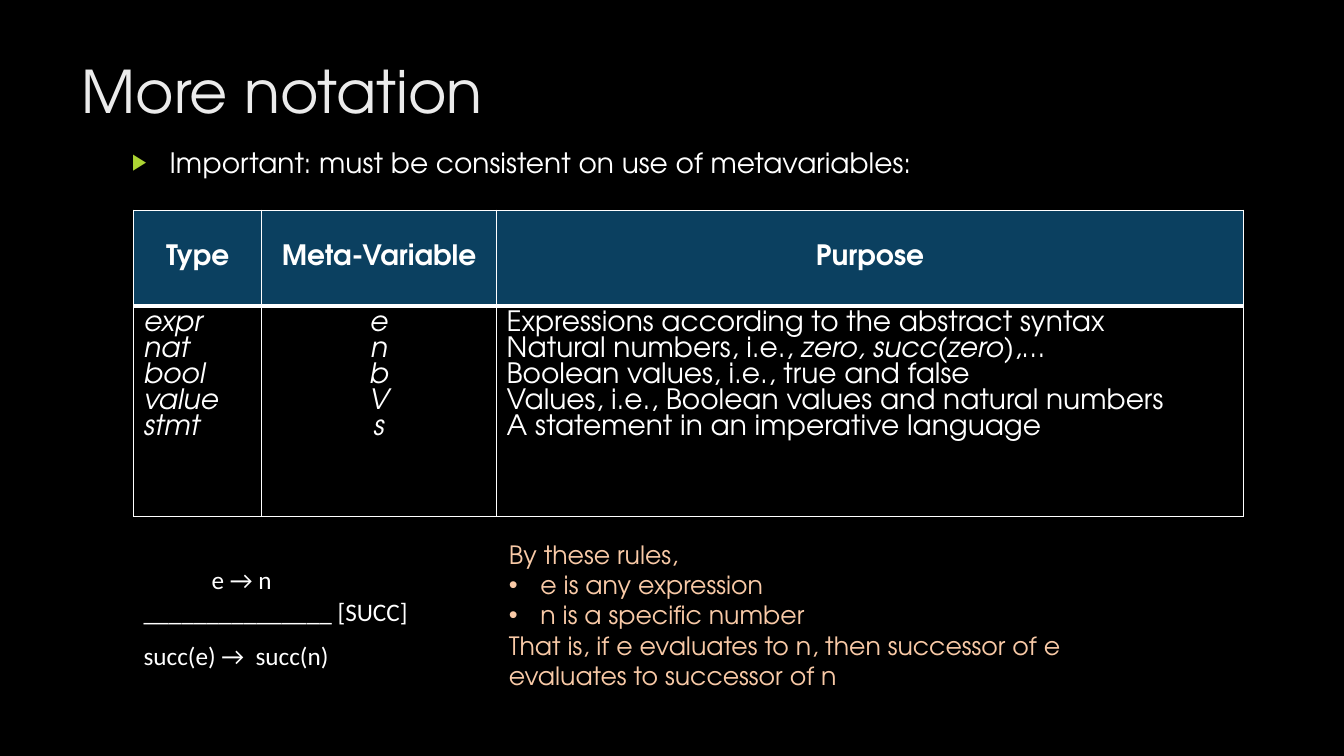
from lxml.etree import SubElement
from pptx import Presentation
from pptx.dml.color import RGBColor
from pptx.enum.text import MSO_ANCHOR, PP_ALIGN
from pptx.oxml.ns import qn
from pptx.util import Pt

BLACK = RGBColor(0x00, 0x00, 0x00)
WHITE = RGBColor(0xFF, 0xFF, 0xFF)
TITLE_GREY = RGBColor(0xEB, 0xEB, 0xEB)
HEADER_BLUE = RGBColor(0x0B, 0x40, 0x60)
BULLET_GREEN = RGBColor(0xAC, 0xD4, 0x33)
PEACH = RGBColor(0xF9, 0xCA, 0xA7)
DISPLAY_FONT = "TeX Gyre Adventor"
RULE_FONT = "Calibri"

TITLE = "More notation"
LEAD = "Important: must be consistent on use of metavariables:"
HEADERS = ["Type", "Meta-Variable", "Purpose"]
NOTATION = [
    ("expr", "e", [("Expressions according to the abstract syntax", False)]),
    ("nat", "n", [("Natural numbers, i.e., ", False), ("zero, succ(zero", True), ("),…", False)]),
    ("bool", "b", [("Boolean values, i.e., true and false", False)]),
    ("value", "V", [("Values, i.e., Boolean values and natural numbers", False)]),
    ("stmt", "s", [("A statement in an imperative language", False)]),
]
INFERENCE = [
    ("e → n", 48.6, 0),
    ("_______________ [SUCC]", 0, 8),
    ("succ(e) →  succ(n)", 0, 8),
]
READING = [
    ("By these rules,", False),
    ("e is any expression", True),
    ("n is a specific number", True),
    ("That is, if e evaluates to n, then successor of e evaluates to successor of n", False),
]

COLUMN_WIDTHS = [91.44, 167.76, 533.52]
ROW_HEIGHTS = [68.4, 150.48]
THIN, THICK = 1, 3


def style(para, size, color, name=DISPLAY_FONT, bold=False):
    font = para.font
    font.size, font.name, font.bold = Pt(size), name, bold
    font.color.rgb = color


def indent(para, left, hanging=0):
    props = para._p.get_or_add_pPr()
    props.set("marL", str(Pt(left)))
    props.set("indent", str(-Pt(hanging)))
    return props


def bullet(para, symbol, hanging, color=None, percent=100):
    props = indent(para, hanging, hanging)
    if color is not None:
        SubElement(SubElement(props, qn("a:buClr")), qn("a:srgbClr"), val=str(color))
    SubElement(props, qn("a:buSzPct"), val=str(percent * 1000))
    SubElement(props, qn("a:buFont"), typeface="Arial")
    SubElement(props, qn("a:buChar"), char=symbol)


def add_text(page, left, top, width, height, lines):
    box = page.shapes.add_textbox(Pt(left), Pt(top), Pt(width), Pt(height))
    box.text_frame.word_wrap = True
    return fill_lines(box.text_frame, lines)


def fill_lines(frame, lines):
    frame.text = "\n".join(lines)
    return frame.paragraphs


def border(cell, top, bottom):
    props = cell._tc.get_or_add_tcPr()
    for side, width in (("L", THIN), ("R", THIN), ("T", top), ("B", bottom)):
        line = SubElement(props, qn(f"a:ln{side}"), w=str(Pt(width)))
        SubElement(SubElement(line, qn("a:solidFill")), qn("a:srgbClr"), val=str(WHITE))


def add_notation_table(page):
    frame = page.shapes.add_table(2, 3, Pt(95.5), Pt(150.2),
                                  Pt(sum(COLUMN_WIDTHS)), Pt(sum(ROW_HEIGHTS)))
    table = frame.table
    table.first_row = table.horz_banding = False
    for row, height in zip(table.rows, ROW_HEIGHTS):
        row.height = Pt(height)
    for index, width in enumerate(COLUMN_WIDTHS):
        table.columns[index].width = Pt(width)

        header = table.cell(0, index)
        header.text = HEADERS[index]
        header.vertical_anchor = MSO_ANCHOR.MIDDLE
        border(header, THIN, THICK)
        header.fill.solid()
        header.fill.fore_color.rgb = HEADER_BLUE

        body = table.cell(1, index)
        border(body, THICK, THIN)
        body.fill.background()
        entries = [entry[index] for entry in NOTATION]
        if index < 2:
            fill_lines(body.text_frame, entries)
        else:
            for number, spans in enumerate(entries):
                frame = body.text_frame
                para = frame.add_paragraph() if number else frame.paragraphs[0]
                for text, italic in spans:
                    span = para.add_run()
                    span.text = text
                    span.font.italic = italic

        for cell in (header, body):
            for para in cell.text_frame.paragraphs:
                centred = cell is header or index == 1
                para.alignment = PP_ALIGN.CENTER if centred else PP_ALIGN.LEFT
                style(para, 20, WHITE, bold=cell is header)
                if cell is body and index < 2:
                    para.font.italic = True


def main():
    deck = Presentation()
    deck.slide_width, deck.slide_height = Pt(960), Pt(540)
    page = deck.slides.add_slide(deck.slide_layouts[6])
    page.background.fill.solid()
    page.background.fill.fore_color.rgb = BLACK

    title = add_text(page, 51.12, 35.5, 740.88, 52.56, [TITLE])[0]
    style(title, 42, TITLE_GREY)

    lead = add_text(page, 87.12, 100.08, 704.16, 40, [LEAD])[0]
    bullet(lead, "▶", 27, BULLET_GREEN, 80)
    style(lead, 20, WHITE)

    add_notation_table(page)

    rule = add_text(page, 95.5, 398, 228.96, 84.24, [line[0] for line in INFERENCE])
    for para, (_, left, after) in zip(rule, INFERENCE):
        indent(para, left)
        para.line_spacing = 1.07
        para.space_after = Pt(after)
        style(para, 18, WHITE, RULE_FONT)

    reading = add_text(page, 356.4, 381.6, 445.68, 116.64, [line[0] for line in READING])
    for para, (_, bulleted) in zip(reading, READING):
        if bulleted:
            bullet(para, "•", 22.5)
        style(para, 18, PEACH)

    deck.save("out.pptx")


if __name__ == "__main__":
    main()
